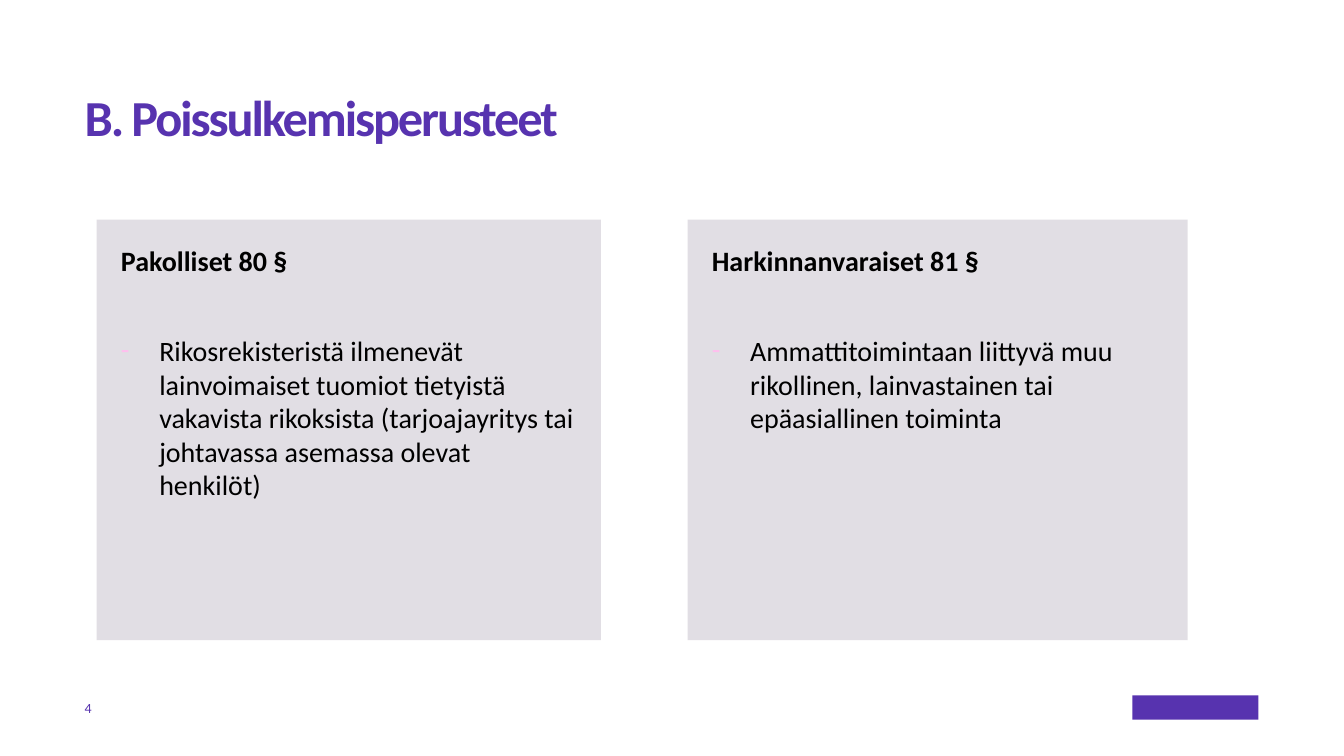
from lxml import etree
from pptx import Presentation
from pptx.dml.color import RGBColor
from pptx.enum.shapes import MSO_SHAPE as SHAPE
from pptx.enum.text import MSO_ANCHOR as ANCHOR, PP_ALIGN as ALIGN
from pptx.oxml.ns import qn
from pptx.util import Inches, Pt

COLORS = {"purple": "5733AF", "panel": "C5BFCA", "dash": "FFBFEE", "text": "000000"}

prs = Presentation()
prs.slide_width, prs.slide_height = Inches(13.33), Inches(7.5)
s = prs.slides.add_slide(prs.slide_layouts[6])


def set_frame(tf, inset, anchor):
    tf.word_wrap = True
    tf.vertical_anchor = anchor
    tf.margin_left = tf.margin_top = tf.margin_right = tf.margin_bottom = Inches(inset)


def add_run(p, text, size, color, bold=False):
    r = p.add_run()
    r.text = text
    r.font.name = "Calibri"
    r.font.size = Pt(size)
    r.font.bold = bold
    r.font.color.rgb = RGBColor.from_string(COLORS[color])
    return r


logo = s.shapes.add_shape(SHAPE.RECTANGLE, Inches(11.23), Inches(6.9), Inches(1.25), Inches(0.24))
logo.shadow.inherit = False
logo.fill.solid()
logo.fill.fore_color.rgb = RGBColor.from_string(COLORS["purple"])
logo.line.fill.background()

title = s.shapes.add_textbox(Inches(0.84), Inches(0.92), Inches(11.66), Inches(1.1))
set_frame(title.text_frame, 0, ANCHOR.TOP)
p = title.text_frame.paragraphs[0]
p.line_spacing = 0.9
r = add_run(p, "B. Poissulkemisperusteet", 36, "purple", True)
r.font._element.set("spc", "-150")

panels = [
    (0.96, 5, "Pakolliset 80 §",
     "Rikosrekisteristä ilmenevät lainvoimaiset tuomiot tietyistä vakavista rikoksista "
     "(tarjoajayritys tai johtavassa asemassa olevat henkilöt)"),
    (6.82, 4.96, "Harkinnanvaraiset 81 §",
     "Ammattitoimintaan liittyvä muu rikollinen, lainvastainen tai epäasiallinen toiminta"),
]
for left, width, heading, ground in panels:
    sp = s.shapes.add_shape(SHAPE.RECTANGLE, Inches(left), Inches(2.18), Inches(width), Inches(4.17))
    sp.shadow.inherit = False
    sp.fill.solid()
    sp.fill.fore_color.rgb = RGBColor.from_string(COLORS["panel"])
    fill_color = sp._element.spPr.find(qn("a:solidFill"))[0]
    etree.SubElement(fill_color, qn("a:alpha")).set("val", "50000")
    sp.line.fill.background()

    tf = sp.text_frame
    set_frame(tf, 0.24, ANCHOR.TOP)
    p = tf.paragraphs[0]
    p.alignment = ALIGN.LEFT
    add_run(p, heading, 20, "text", True)

    p = tf.add_paragraph()
    p.alignment = ALIGN.LEFT
    p.space_before = Pt(40)
    pPr = p._p.get_or_add_pPr()
    pPr.set("marL", str(Inches(0.38)))
    pPr.set("indent", str(-Inches(0.38)))
    bullet_color = etree.SubElement(pPr, qn("a:buClr"))
    etree.SubElement(bullet_color, qn("a:srgbClr")).set("val", COLORS["dash"])
    etree.SubElement(pPr, qn("a:buFont")).set("typeface", "Calibri")
    etree.SubElement(pPr, qn("a:buChar")).set("char", "-")
    add_run(p, ground, 20, "text")

number = s.shapes.add_textbox(Inches(0.84), Inches(6.9), Inches(0.47), Inches(0.24))
set_frame(number.text_frame, 0, ANCHOR.MIDDLE)
add_run(number.text_frame.paragraphs[0], "4", 10, "purple")

prs.save("out.pptx")
